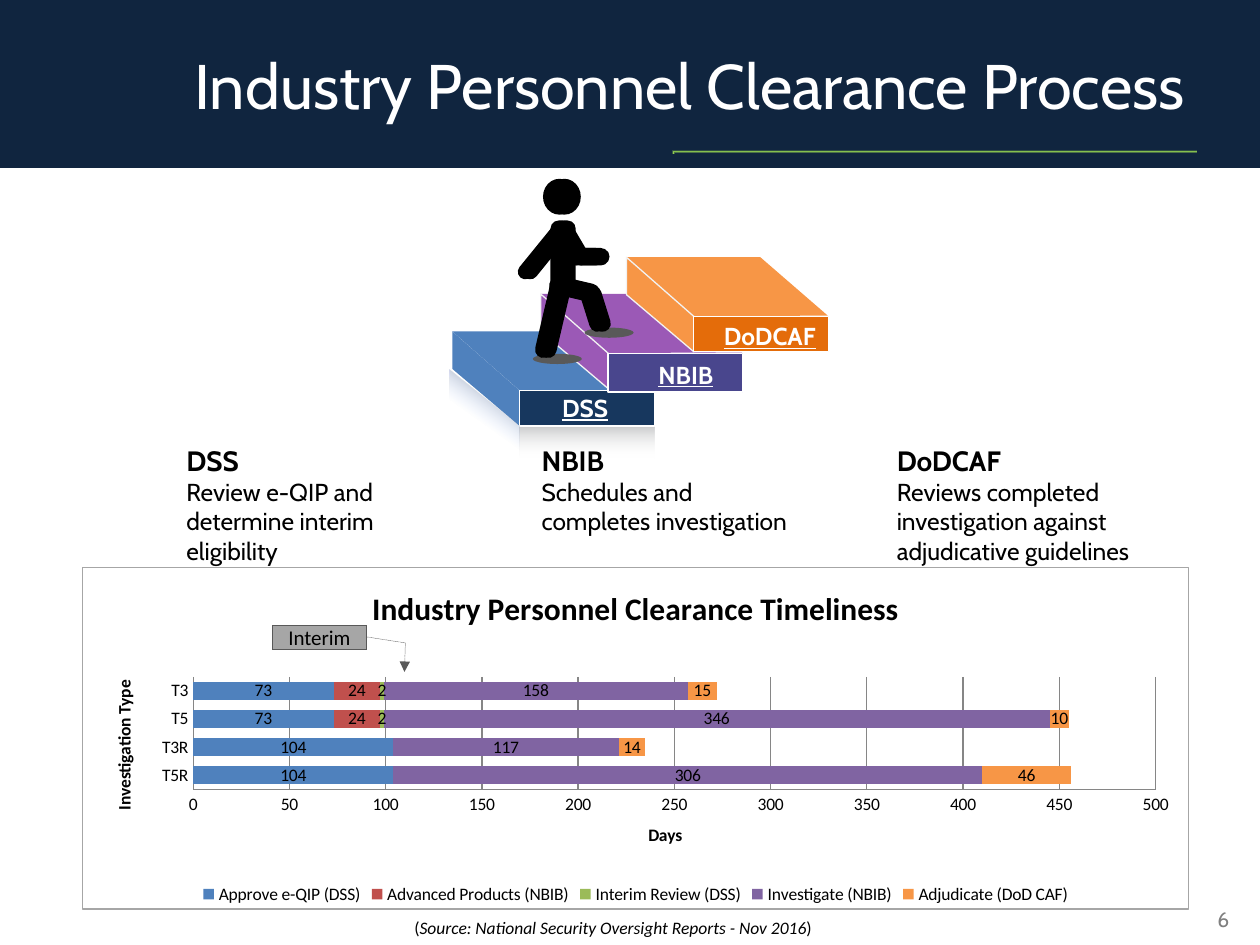
from dataclasses import dataclass

from lxml.etree import SubElement
from pptx import Presentation
from pptx.chart.data import CategoryChartData
from pptx.dml.color import RGBColor
from pptx.enum.chart import XL_CHART_TYPE as ChartType, XL_LEGEND_POSITION as LegendPosition, XL_TICK_MARK as TickMark
from pptx.enum.dml import MSO_LINE as Dash
from pptx.enum.shapes import MSO_SHAPE as Preset
from pptx.enum.text import MSO_ANCHOR as Anchor, PP_ALIGN as Align
from pptx.oxml import parse_xml
from pptx.oxml.ns import nsdecls, qn
from pptx.util import Pt


@dataclass(frozen=True)
class Theme:
    """Colours, fonts and type sizes of the slide."""
    navy: str = "10253F"
    green: str = "92D050"
    white: str = "FFFFFF"
    black: str = "000000"
    edge: str = "F2F2F2"
    grey: str = "808080"
    border: str = "A6A6A6"
    dark: str = "595959"
    grid: str = "868686"
    blue: str = "4F81BD"
    orange: str = "F79646"
    heading: str = "Cabin"
    body: str = "Calibri"
    title: int = 36
    chart_title: int = 18
    lead: int = 16
    text: int = 14
    note: int = 12
    small: int = 10


THEME = Theme()


def style_font(font, size, color, name=THEME.heading, bold=False, underline=False):
    """Set the look of a font."""
    font.size, font.name, font.bold, font.underline = Pt(size), name, bold, underline
    font.color.rgb = RGBColor.from_string(color)


def paint(shape, fill, line=None, width=0.75):
    """Give a shape a flat fill and an optional outline."""
    shape.shadow.inherit = False
    shape.fill.solid()
    shape.fill.fore_color.rgb = RGBColor.from_string(fill)
    if line:
        shape.line.color.rgb = RGBColor.from_string(line)
        shape.line.width = Pt(width)
    else:
        shape.line.fill.background()
    return shape


def paint_gradient(shape, stops, direction):
    """Replace the fill of a shape by a gradient of (position, colour, opacity) stops."""
    paint(shape, THEME.white)
    stop_xml = "".join(
        f'<a:gs pos="{position * 1000}"><a:srgbClr val="{color}"><a:alpha val="{opacity * 1000}"/></a:srgbClr></a:gs>'
        for position, color, opacity in stops)
    gradient = parse_xml(f'<a:gradFill {nsdecls("a")} rotWithShape="1"><a:gsLst>{stop_xml}</a:gsLst>{direction}</a:gradFill>')
    properties = shape._element.spPr
    properties.replace(properties.find(qn("a:solidFill")), gradient)


def add_preset(slide, preset, left, top, width, height):
    """Add a preset shape."""
    return slide.shapes.add_shape(preset, Pt(left), Pt(top), Pt(width), Pt(height))


def add_polygon(slide, left, top, points):
    """Add a closed outline whose points are relative to a corner."""
    corners = [(Pt(left + x), Pt(top + y)) for x, y in points]
    builder = slide.shapes.build_freeform(*corners[0])
    builder.add_line_segments(corners[1:], close=True)
    return builder.convert_to_shape()


def add_text(slide, box, lines, align=Align.LEFT, anchor=Anchor.TOP, wrap=True):
    """Add a text box with one styled paragraph per (text, font options) line."""
    frame = slide.shapes.add_textbox(*map(Pt, box)).text_frame
    frame.word_wrap, frame.vertical_anchor = wrap, anchor
    for index, (text, options) in enumerate(lines):
        paragraph = frame.add_paragraph() if index else frame.paragraphs[0]
        paragraph.text, paragraph.alignment = text, align
        style_font(paragraph.font, **options)
    return frame


def add_header(slide, left, top, width, height):
    """Draw the title band with its fading rule."""
    paint(add_preset(slide, Preset.RECTANGLE, left, top, width, height), THEME.navy)
    rule = add_preset(slide, Preset.RECTANGLE, left + 84, top + 84, 600, 3.6)
    paint_gradient(rule, [(0, THEME.navy, 100), (50, THEME.green, 100), (100, THEME.navy, 100)],
                   '<a:path path="rect"><a:fillToRect l="100000" t="100000"/></a:path>')
    add_text(slide, (left + 84, top + 12, 600, 72),
             [("Industry Personnel Clearance Process", dict(size=THEME.title, color=THEME.white))],
             Align.RIGHT, Anchor.MIDDLE)


def add_step(slide, left, top, name, fill, front, edge, front_height, label):
    """Draw one block of the stairs; label is the offset and width of its name."""
    paint(add_polygon(slide, left, top, [(38.5, 33.8), (0, 0), (76.5, 0), (115, 33.4)]), fill)
    paint(add_polygon(slide, left, top, [(38.5, 54), (0, 21.4), (0, 0), (38.5, 33.8)]), fill, edge)
    paint(add_preset(slide, Preset.RECTANGLE, left + 38.5, top + 33.8, 77, front_height), front, THEME.white)
    x, y, width = label
    add_text(slide, (left + x, top + y, width, 24.5),
             [(name, dict(size=THEME.text, color=THEME.white, bold=True, underline=True))], Align.CENTER)


def add_stairs(slide, left, top):
    """Draw the three blocks and the fading shade below the first."""
    shade = add_preset(slide, Preset.RECTANGLE, left + 38.5, top + 96.5, 77, 22.3)
    paint_gradient(shade, [(0, "03070C", 22), (82, THEME.white, 0)], '<a:lin ang="5400000" scaled="0"/>')
    add_step(slide, left, top + 42.4, "DSS", THEME.blue, "17375E", None, 20.2, (41.7, 31.6, 68.4))
    add_step(slide, left + 50.5, top + 21, "NBIB", "9B59B6", "49468D", THEME.edge, 22.3, (54.5, 34, 56.9))
    add_step(slide, left + 99.5, top, "DoDCAF", THEME.orange, "E46C0A", THEME.edge, 20.2, (44.5, 33, 74.9))
    side = add_polygon(slide, left - 1.5, top + 64, [(0, 0), (0, 17.3), (39.6, 54), (39.6, 32.4)])
    paint_gradient(side, [(0, "03070C", 86), (56, "A4C4FF", 0)], '<a:lin ang="7560000" scaled="0"/>')


def add_climber(slide, left, top):
    """Draw the walking figure with its doubled body and the shade at its feet."""
    for x, y in ((-5.8, 100), (23.8, 85)):
        paint(add_preset(slide, Preset.OVAL, left + x, top + y, 28, 5.8), THEME.dark)
    limbs = [(10, 24.3, 9.4, 26.3, 329.5, 0.5), (19.4, 33.8, 10, 21.4, 90, 0.5), (0, 53.6, 9.4, 49.3, 13.2, 0.5),
             (-5, 22.3, 8.6, 38.5, 39.1, 0.5), (4.3, 23.8, 11.5, 40.7, 0, 0.41),
             (11.5, 49.7, 10, 26.6, 103.1, 0.5), (23.8, 60.8, 9.4, 27, 342.6, 0.5)]
    for shift in (0, 2.9):
        for x, y, width, height, rotation, roundness in limbs:
            limb = paint(add_preset(slide, Preset.ROUNDED_RECTANGLE, left + shift + x, top + y, width, height), THEME.black)
            limb.rotation, limb.adjustments[0] = rotation, roundness
        paint(add_preset(slide, Preset.OVAL, left + shift, top, 18.7, 20.5), THEME.black)


def add_roles(slide, left, top, pitch):
    """Write the three columns that say what each agency does."""
    roles = [("DSS", "Review e-QIP and determine interim eligibility"),
             ("NBIB", "Schedules and completes investigation"),
             ("DoDCAF", "Reviews completed investigation against adjudicative guidelines")]
    for index, (agency, duty) in enumerate(roles):
        add_text(slide, (left + index * pitch, top, 158.4, 78),
                 [(agency, dict(size=THEME.lead, color=THEME.black, bold=True)),
                  (duty, dict(size=THEME.text, color=THEME.black))])


def set_title(owner, text, size):
    """Title a chart or an axis in bold."""
    frame = owner.text_frame
    frame.text = text
    style_font(frame.paragraphs[0].font, size, THEME.black, THEME.body, bold=True)
    return frame


def add_timeline(slide, left, top, width, height):
    """Draw the stacked bar chart of days per investigation type."""
    series = [("Approve e-QIP (DSS)", (104, 104, 73, 73), THEME.blue),
              ("Advanced Products (NBIB)", (None, None, 24, 24), "C0504D"),
              ("Interim Review (DSS)", (None, None, 2, 2), "9BBB59"),
              ("Investigate (NBIB)", (306, 117, 346, 158), "8064A2"),
              ("Adjudicate (DoD CAF)", (46, 14, 10, 15), THEME.orange)]
    data = CategoryChartData()
    data.categories = ["T5R", "T3R", "T5", "T3"]
    for name, values, _ in series:
        data.add_series(name, values)
    chart = slide.shapes.add_chart(ChartType.BAR_STACKED, Pt(left), Pt(top), Pt(width), Pt(height), data).chart
    style_font(chart.font, THEME.small, THEME.black, THEME.body)
    set_title(chart.chart_title, "Industry Personnel Clearance Timeliness", THEME.chart_title)
    chart.chart_title.include_in_layout = False
    chart.has_legend = True
    chart.legend.position, chart.legend.include_in_layout = LegendPosition.BOTTOM, False
    plot = chart.plots[0]
    plot.gap_width, plot.overlap, plot.vary_by_categories = 55, 100, False
    plot.has_data_labels = True
    plot.data_labels.show_value = True
    for bar, (_, _, color) in zip(plot.series, series):
        bar.format.fill.solid()
        bar.format.fill.fore_color.rgb = RGBColor.from_string(color)
    days, kinds = chart.value_axis, chart.category_axis
    days.minimum_scale, days.maximum_scale, days.major_unit = 0, 500, 50
    for axis, title in ((days, "Days"), (kinds, "Investigation Type")):
        axis.major_tick_mark = axis.minor_tick_mark = TickMark.NONE
        frame = set_title(axis.axis_title, title, THEME.small)
        axis.format.line.color.rgb = RGBColor.from_string(THEME.grid)
    frame._txBody.bodyPr.set("rot", "-5400000")
    frame._txBody.bodyPr.set("vert", "horz")
    days.major_gridlines.format.line.color.rgb = RGBColor.from_string(THEME.grid)
    place_plot(chart, x=0.1, y=0.32, w=0.87, h=0.33)


def place_plot(chart, **place):
    """Fix the plot area at fractions of the chart and outline the chart."""
    area = chart._chartSpace.chart.plotArea
    for old in area.findall(qn("c:layout")):
        area.remove(old)
    settings = {"layoutTarget": "inner", "xMode": "edge", "yMode": "edge", **place}
    inner = "".join(f'<c:{key} val="{value}"/>' for key, value in settings.items())
    area.insert(0, parse_xml(f'<c:layout {nsdecls("c")}><c:manualLayout>{inner}</c:manualLayout></c:layout>'))
    chart._chartSpace.chart.addnext(parse_xml(
        f'<c:spPr {nsdecls("c", "a")}><a:solidFill><a:srgbClr val="{THEME.white}"/></a:solidFill>'
        f'<a:ln w="9525"><a:solidFill><a:srgbClr val="{THEME.border}"/></a:solidFill></a:ln></c:spPr>'))


def add_callout(slide, left, top, width, height):
    """Point at the interim stage of the chart."""
    callout = paint(add_preset(slide, Preset.LINE_CALLOUT_2, left, top, width, height), THEME.border, THEME.dark, 0.25)
    for index, value in enumerate((0.5, 1, 0.75, 1.41, 1.96, 1.4)):
        callout.adjustments[index] = value
    callout.line.dash_style = Dash.ROUND_DOT
    SubElement(callout.line._ln, qn("a:tailEnd"), type="triangle")
    frame = callout.text_frame
    frame.text, frame.vertical_anchor = "Interim", Anchor.MIDDLE
    frame.paragraphs[0].alignment = Align.CENTER
    style_font(frame.paragraphs[0].font, THEME.note, THEME.black, THEME.body)


def add_footer(slide, left, top):
    """Write the source line and the page number."""
    options = dict(size=THEME.small, color=THEME.black, name=THEME.body)
    paragraph = add_text(slide, (left, top, 244.8, 19.4), [("(", options)], wrap=False).paragraphs[0]
    for text, italic in (("Source: National Security Oversight Reports - Nov 2016", True), (")", False)):
        run = paragraph.add_run()
        run.text, run.font.italic = text, italic
    add_text(slide, (left + 454.3, top - 4.3, 30.2, 18), [("6", dict(size=THEME.note, color=THEME.grey))],
             Align.CENTER, Anchor.MIDDLE)


def main():
    """Build the slide and save it."""
    presentation = Presentation()
    presentation.slide_width, presentation.slide_height = Pt(720), Pt(540)
    slide = presentation.slides.add_slide(presentation.slide_layouts[6])
    add_header(slide, 0, 0, 720, 96)
    add_stairs(slide, 258.5, 147)
    add_climber(slide, 310.3, 102.2)
    add_roles(slide, 99.4, 249.8, 203)
    add_timeline(slide, 46.8, 324, 632.9, 195.8)
    add_callout(slide, 155.5, 357.1, 54, 13.7)
    add_footer(slide, 229.7, 520.6)
    presentation.save("out.pptx")


if __name__ == "__main__":
    main()
